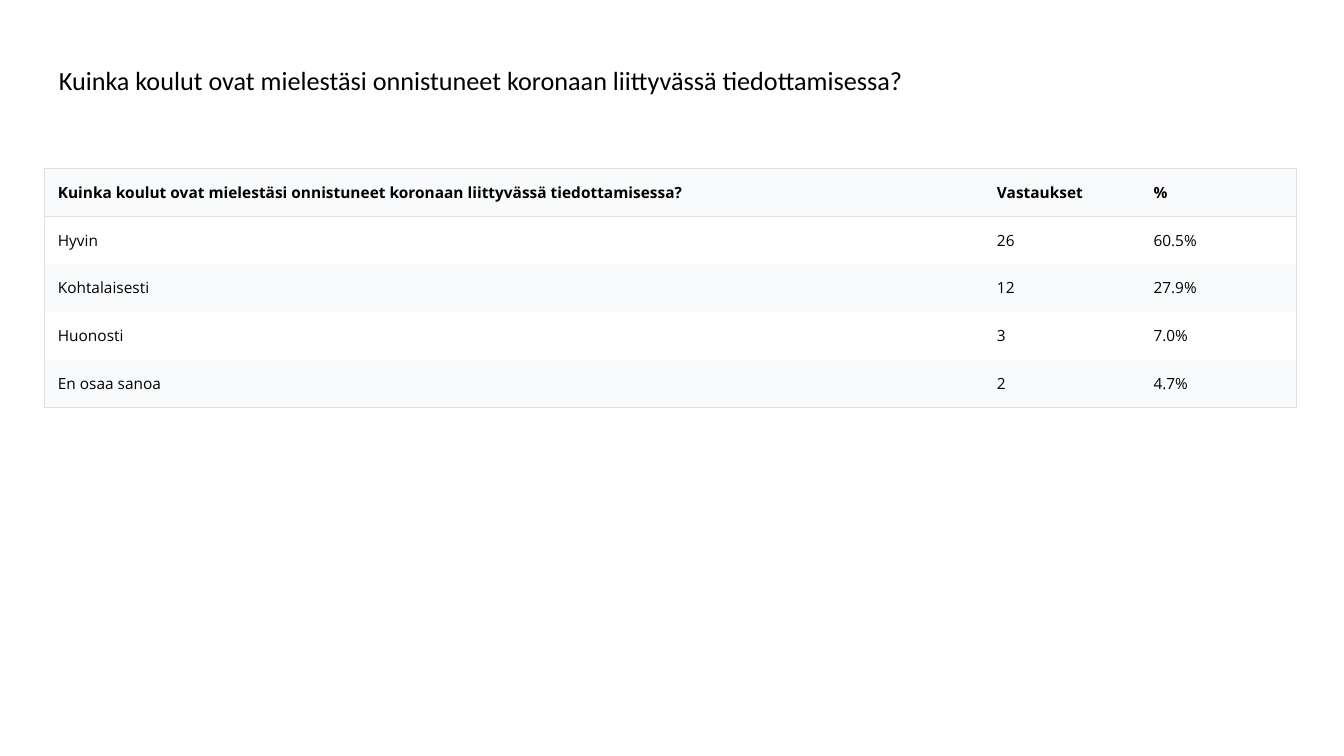
"""Build a survey result slide with a question and a table of answers."""
import pptx
import pptx.dml.color
import pptx.enum.text
import pptx.oxml
import pptx.oxml.ns
import pptx.util
from dataclasses import dataclass

Inches, Pt = pptx.util.Inches, pptx.util.Pt

QUESTION = "Kuinka koulut ovat mielestäsi onnistuneet koronaan liittyvässä tiedottamisessa?"
ROWS = [
    (QUESTION, "Vastaukset", "%"),
    ("Hyvin", "26", "60.5%"),
    ("Kohtalaisesti", "12", "27.9%"),
    ("Huonosti", "3", "7.0%"),
    ("En osaa sanoa", "2", "4.7%"),
]
COL_SHARES = (6, 1, 1)
TABLE_LEFT, TABLE_TOP, TABLE_WIDTH, ROW_HEIGHT = 0.44, 1.67, 12.42, 0.44


@dataclass(frozen=True)
class Theme:
    """Colours, fonts, sizes and padding of the slide."""
    text: str = "000000"
    border: str = "DAE2E5"
    bands: tuple = ("F9FAFB", "FFFFFF")
    title_font: str = "Calibri"
    table_font: str = "Open Sans"
    title_size: float = 18.7
    table_size: float = 11
    border_width: float = 1
    padding: float = 2 / 15


THEME = Theme()


def rgb(value):
    """Return a colour object for a hex string."""
    return pptx.dml.color.RGBColor.from_string(value)


def style_text(box, font, size, bold):
    """Format the padding and the runs of a text frame or cell."""
    box.margin_left = box.margin_right = Inches(THEME.padding)
    box.margin_top = box.margin_bottom = Inches(THEME.padding)
    box.vertical_anchor = pptx.enum.text.MSO_ANCHOR.TOP
    tf = getattr(box, "text_frame", box)
    for p in tf.paragraphs:
        p.alignment = pptx.enum.text.PP_ALIGN.LEFT
        for r in p.runs:
            r.font.name, r.font.size, r.font.bold = font, Pt(size), bold
            r.font.color.rgb = rgb(THEME.text)


def set_borders(cell, sides):
    """Draw the named sides of a cell and hide the others."""
    tc_pr = cell._tc.get_or_add_tcPr()
    for side in "LRTB":
        paint = "<a:noFill/>"
        if side in sides:
            paint = f'<a:solidFill><a:srgbClr val="{THEME.border}"/></a:solidFill>'
        tc_pr.append(pptx.oxml.parse_xml(
            f'<a:ln{side} {pptx.oxml.ns.nsdecls("a")} w="{Pt(THEME.border_width)}">'
            f"{paint}</a:ln{side}>"))


def add_title(s):
    """Place the question as the slide title."""
    sp = s.shapes.title
    sp.left, sp.top, sp.width, sp.height = map(Inches, (0.45, 0.39, 12.42, 0.84))
    tf = sp.text_frame
    tf.text = QUESTION
    tf.word_wrap = True
    tf.auto_size = pptx.enum.text.MSO_AUTO_SIZE.NONE
    style_text(tf, THEME.title_font, THEME.title_size, False)
    tf.vertical_anchor = pptx.enum.text.MSO_ANCHOR.MIDDLE
    tf.paragraphs[0].line_spacing = 0.9


def add_answers(s):
    """Place the table of answers with banded rows and an outer frame."""
    last_row, last_col = len(ROWS) - 1, len(COL_SHARES) - 1
    table = s.shapes.add_table(
        len(ROWS), len(COL_SHARES), Inches(TABLE_LEFT), Inches(TABLE_TOP),
        Inches(TABLE_WIDTH), Inches(ROW_HEIGHT * len(ROWS))).table
    for column, share in zip(table.columns, COL_SHARES):
        column.width = Inches(TABLE_WIDTH * share / sum(COL_SHARES))
    for i, row in enumerate(ROWS):
        for j, text in enumerate(row):
            cell = table.cell(i, j)
            cell.text_frame.text = text
            style_text(cell, THEME.table_font, THEME.table_size, i == 0)
            drawn = {"L": j == 0, "R": j == last_col,
                     "T": i <= 1, "B": i in (0, last_row)}
            set_borders(cell, [side for side in drawn if drawn[side]])
            cell.fill.solid()
            cell.fill.fore_color.rgb = rgb(THEME.bands[i % 2])


def main():
    """Create and save the presentation."""
    prs = pptx.Presentation()
    prs.slide_width, prs.slide_height = Inches(13.33), Inches(7.5)
    s = prs.slides.add_slide(prs.slide_layouts[5])
    add_title(s)
    add_answers(s)
    prs.save("out.pptx")


if __name__ == "__main__":
    main()
